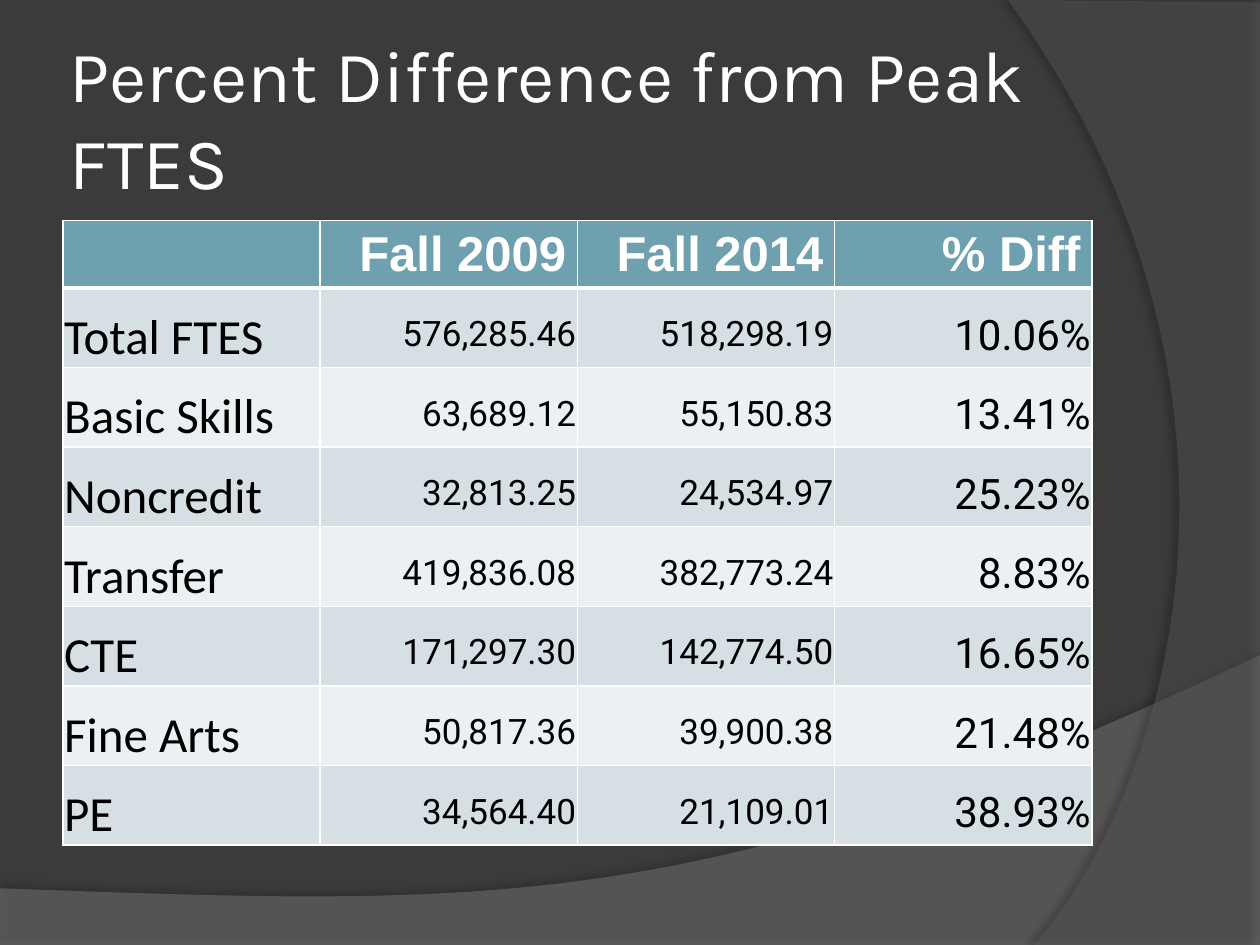
from pptx import Presentation
from pptx.dml.color import RGBColor
from pptx.enum.text import MSO_ANCHOR as Anchor, PP_ALIGN as Align
from pptx.oxml import parse_xml
from pptx.oxml.ns import nsdecls, qn
from pptx.util import Pt

WHITE, BLACK = "FFFFFF", "000000"
HEADER_FILL = "6EA0B0"
BAND_FILLS = ("D5DFE4", "EBF0F2")
HEADERS = ("", "Fall 2009", "Fall 2014", "% Diff")
ROWS = (
    ("Total FTES", "576,285.46", "518,298.19", "10.06%"),
    ("Basic Skills", "63,689.12", "55,150.83", "13.41%"),
    ("Noncredit", "32,813.25", "24,534.97", "25.23%"),
    ("Transfer", "419,836.08", "382,773.24", "8.83%"),
    ("CTE", "171,297.30", "142,774.50", "16.65%"),
    ("Fine Arts", "50,817.36", "39,900.38", "21.48%"),
    ("PE", "34,564.40", "21,109.01", "38.93%"),
)
COLUMN_FONTS = (("Calibri", 28), ("Roboto", 20), ("Roboto", 20), ("Roboto", 24))


def rgb(color):
    return RGBColor.from_string(color)


def add_run(p, text, font, size, color, bold=False):
    r = p.add_run()
    r.text = text
    r.font.name, r.font.size, r.font.bold = font, Pt(size), bold
    r.font.color.rgb = rgb(color)


def set_insets(target, left, top, right, bottom):
    target.margin_left, target.margin_top = Pt(left), Pt(top)
    target.margin_right, target.margin_bottom = Pt(right), Pt(bottom)


def bezier(p0, p1, p2, p3, steps=48):
    """Points along a cubic curve, both ends included."""
    ts = [i / steps for i in range(steps + 1)]
    return [tuple((1 - t) ** 3 * a + 3 * (1 - t) ** 2 * t * b
                  + 3 * (1 - t) * t ** 2 * c + t ** 3 * d
                  for a, b, c, d in zip(p0, p1, p2, p3)) for t in ts]


def add_swoosh(slide, left, top, points, color, alpha, shadow):
    """Translucent outline; shadow is (alpha, blur, distance, direction)."""
    corners = [(Pt(left + x), Pt(top + y)) for x, y in points]
    builder = slide.shapes.build_freeform(*corners[0], scale=1.0)
    builder.add_line_segments(corners[1:], close=True)
    sp = builder.convert_to_shape()
    sp.fill.solid()
    sp.fill.fore_color.rgb = rgb(color)
    sp.line.fill.background()
    clr = sp._element.spPr.find(qn("a:solidFill"))[0]
    clr.append(parse_xml(f'<a:alpha {nsdecls("a")} val="{alpha * 1000}"/>'))
    sp.shadow.inherit = False
    opacity, blur, dist, angle = shadow
    sp._element.spPr.find(qn("a:effectLst")).append(parse_xml(
        f'<a:outerShdw {nsdecls("a")} blurRad="{Pt(blur)}" dist="{Pt(dist)}" '
        f'dir="{angle * 60000}" algn="ctr" rotWithShape="0"><a:srgbClr val="{BLACK}">'
        f'<a:alpha val="{opacity * 1000}"/></a:srgbClr></a:outerShdw>'))


def add_background(slide):
    slide.background.fill.solid()
    slide.background.fill.fore_color.rgb = rgb("3B3B3B")
    wave = [(0, 166.3), (720, 166.3)] + bezier(
        (720, 0), (402.5, 150.5), (281.5, 143.3), (0, 133.2))
    add_swoosh(slide, 0, 374.4, wave, "7F7F7F", 45, (35, 4, 3.5, 270))
    arc = [(144, 1.4), (144, 540)] + bezier(
        (15.1, 540), (97.2, 445.7), (157, 216), (0, 0))
    add_swoosh(slide, 576, 0, arc, "5E5E5E", 40, (45, 4, 4, 180))


def fill_title(slide, left, top, width, height):
    title = slide.shapes.title
    slide.shapes._spTree.append(title._element)  # in front of the background
    title.left, title.top = Pt(left), Pt(top)
    title.width, title.height = Pt(width), Pt(height)
    tf = title.text_frame
    tf.word_wrap, tf.vertical_anchor = True, Anchor.MIDDLE
    set_insets(tf, 3.6, 3.6, 3.6, 3.6)
    p = tf.paragraphs[0]
    p.alignment, p.line_spacing = Align.LEFT, 1.0
    add_run(p, "Percent Difference from Peak FTES", "Karla", 41.4, WHITE)


def set_borders(cell, top, bottom):
    """White borders, one point wide at the sides."""
    tc_pr = cell._tc.get_or_add_tcPr()
    for side, width in (("L", 1), ("R", 1), ("T", top), ("B", bottom)):
        tc_pr.append(parse_xml(
            f'<a:ln{side} {nsdecls("a")} w="{Pt(width)}"><a:solidFill>'
            f'<a:srgbClr val="{WHITE}"/></a:solidFill></a:ln{side}>'))


def format_cell(cell, row, col, text):
    header = row == 0
    set_borders(cell, 3 if row == 1 else 1, 3 if header else 1)
    cell.fill.solid()
    cell.fill.fore_color.rgb = rgb(HEADER_FILL if header else BAND_FILLS[(row - 1) % 2])
    p = cell.text_frame.paragraphs[0]
    p.alignment = Align.RIGHT if col else Align.LEFT
    if header:
        set_insets(cell, 6.5, 3.6, 6.5, 3.6)
        cell.vertical_anchor = Anchor.TOP
        if text:
            add_run(p, text, "Arial", 28, WHITE, bold=True)
    else:
        set_insets(cell, 0.7, 0.7, 0.7, 0)
        cell.vertical_anchor = Anchor.MIDDLE if col else Anchor.BOTTOM
        p.line_spacing = 1.3
        add_run(p, text, *COLUMN_FONTS[col], BLACK)


def add_ftes_table(slide, left, top, width, header_height, row_height):
    grid = (HEADERS,) + ROWS
    height = header_height + row_height * len(ROWS)
    table = slide.shapes.add_table(len(grid), len(HEADERS), Pt(left), Pt(top),
                                   Pt(width), Pt(height)).table
    table.horz_banding = False
    for column in table.columns:
        column.width = Pt(width / len(HEADERS))
    for i, texts in enumerate(grid):
        table.rows[i].height = Pt(row_height if i else header_height)
        for j, text in enumerate(texts):
            format_cell(table.cell(i, j), i, j, text)


def main():
    prs = Presentation()
    prs.slide_width, prs.slide_height = Pt(720), Pt(540)
    slide = prs.slides.add_slide(prs.slide_layouts[5])
    add_background(slide)
    fill_title(slide, 36, 21.6, 588, 90)
    add_ftes_table(slide, 36, 126, 588, 38.5, 45.5)
    prs.save("out.pptx")


if __name__ == "__main__":
    main()
